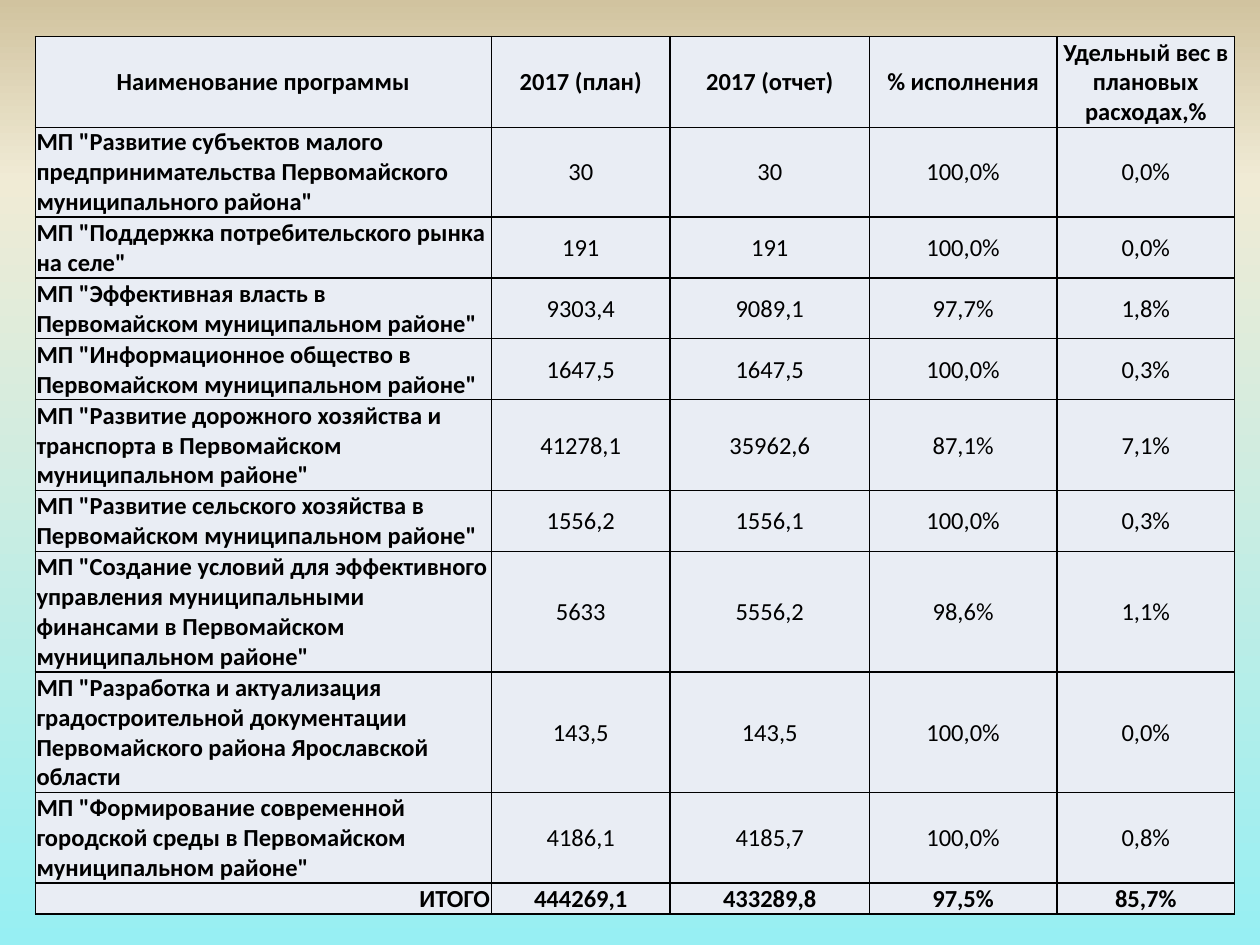
from copy import deepcopy

from pptx import Presentation
from pptx.dml.color import RGBColor
from pptx.enum.text import MSO_ANCHOR, PP_ALIGN
from pptx.oxml import parse_xml
from pptx.oxml.ns import nsdecls, qn
from pptx.util import Inches, Pt

LEFT, CENTER, RIGHT = PP_ALIGN.LEFT, PP_ALIGN.CENTER, PP_ALIGN.RIGHT
MIDDLE, BOTTOM = MSO_ANCHOR.MIDDLE, MSO_ANCHOR.BOTTOM

BLACK = RGBColor(0x00, 0x00, 0x00)
CELL_FILL = RGBColor(0xE9, 0xED, 0xF4)
BACKGROUND_STOPS = [
    (0, RGBColor(0x97, 0xEF, 0xF3)),
    (0.81, RGBColor(0xF0, 0xEB, 0xD5)),
    (1, RGBColor(0xD1, 0xC3, 0x9F)),
]

FONT = "Calibri"
FONT_SIZE = Pt(14)
TABLE_LEFT, HEADER_TOP = 0.28, 0.29
COLUMN_WIDTHS = [3.62, 1.42, 1.58, 1.49, 1.41]
LINE_HEIGHT = 0.237  # one line of cell text, in inches
HEADER_LINES = 3

HEADER = ["Наименование программы", "2017 (план)", "2017 (отчет)",
          "% исполнения", "Удельный вес в плановых расходах,%"]

# Lines of text in the row, then its five cells
PROGRAMMES = [
    (3, 'МП "Развитие субъектов малого предпринимательства Первомайского муниципального района"',
     "30", "30", "100,0%", "0,0%"),
    (2, 'МП "Поддержка потребительского рынка на селе"',
     "191", "191", "100,0%", "0,0%"),
    (2, 'МП "Эффективная власть в Первомайском муниципальном районе"',
     "9303,4", "9089,1", "97,7%", "1,8%"),
    (2, 'МП "Информационное общество в Первомайском муниципальном районе"',
     "1647,5", "1647,5", "100,0%", "0,3%"),
    (3, 'МП "Развитие дорожного хозяйства и транспорта в Первомайском муниципальном районе"',
     "41278,1", "35962,6", "87,1%", "7,1%"),
    (2, 'МП "Развитие сельского хозяйства в Первомайском муниципальном районе"',
     "1556,2", "1556,1", "100,0%", "0,3%"),
    (4, 'МП "Создание условий для эффективного управления муниципальными финансами '
        'в Первомайском муниципальном районе"',
     "5633", "5556,2", "98,6%", "1,1%"),
    (4, 'МП "Разработка и актуализация градостроительной документации '
        'Первомайского района Ярославской области',
     "143,5", "143,5", "100,0%", "0,0%"),
    (3, 'МП "Формирование современной городской среды в Первомайском муниципальном районе"',
     "4186,1", "4185,7", "100,0%", "0,8%"),
]
TOTAL = ["ИТОГО", "444269,1", "433289,8", "97,5%", "85,7%"]


def paint_background(slide):
    """Three-colour gradient running from the bottom edge to the top."""
    fill = slide.background.fill
    fill.gradient()
    fill.gradient_angle = 90
    stop_list = slide.element.find(".//" + qn("a:gsLst"))
    stop_list.append(deepcopy(stop_list[-1]))
    for stop, (position, color) in zip(fill.gradient_stops, BACKGROUND_STOPS):
        stop.position = position
        stop.color.rgb = color


def add_borders(cell):
    properties = cell._tc.get_or_add_tcPr()
    for side in ("lnL", "lnR", "lnT", "lnB"):
        properties.append(parse_xml(
            f'<a:{side} {nsdecls("a")} w="{Pt(1)}"><a:solidFill>'
            f'<a:srgbClr val="{BLACK}"/></a:solidFill></a:{side}>'))


def fill_cell(cell, text, bold, alignment, anchor):
    add_borders(cell)
    cell.fill.solid()
    cell.fill.fore_color.rgb = CELL_FILL
    cell.margin_left = cell.margin_right = cell.margin_top = Inches(0.01)
    cell.margin_bottom = 0
    cell.vertical_anchor = anchor
    paragraph = cell.text_frame.paragraphs[0]
    paragraph.alignment = alignment
    run = paragraph.add_run()
    run.text = text
    run.font.name = FONT
    run.font.size = FONT_SIZE
    run.font.bold = bold
    run.font.color.rgb = BLACK


def add_grid(slide, top, line_counts):
    """Empty table whose row heights follow their numbers of text lines."""
    frame = slide.shapes.add_table(
        len(line_counts), len(COLUMN_WIDTHS), Inches(TABLE_LEFT), Inches(top),
        Inches(sum(COLUMN_WIDTHS)), Inches(sum(line_counts) * LINE_HEIGHT))
    table = frame.table
    table.first_row = table.horz_banding = False
    for column, width in zip(table.columns, COLUMN_WIDTHS):
        column.width = Inches(width)
    for row, lines in zip(table.rows, line_counts):
        row.height = Inches(lines * LINE_HEIGHT)
    return table


def add_programme_table(slide, top):
    table = add_grid(slide, top, [lines for lines, *_ in PROGRAMMES] + [1])
    rows = [texts for _, *texts in PROGRAMMES] + [TOTAL]
    for row_index, texts in enumerate(rows):
        is_total = texts is TOTAL
        for column_index, text in enumerate(texts):
            cell = table.cell(row_index, column_index)
            if column_index == 0:
                fill_cell(cell, text, True, RIGHT if is_total else LEFT, BOTTOM)
            else:
                fill_cell(cell, text, is_total, CENTER, MIDDLE)


def add_header_table(slide, top):
    table = add_grid(slide, top, [HEADER_LINES])
    for column_index, text in enumerate(HEADER):
        anchor = BOTTOM if text is HEADER[-1] else MIDDLE
        fill_cell(table.cell(0, column_index), text, True, CENTER, anchor)


def main():
    presentation = Presentation()
    presentation.slide_width = Inches(10)
    presentation.slide_height = Inches(7.5)
    blank_layout = presentation.slide_layouts[6]
    slide = presentation.slides.add_slide(blank_layout)

    paint_background(slide)
    # The body starts where the header ends
    add_programme_table(slide, HEADER_TOP + HEADER_LINES * LINE_HEIGHT)
    add_header_table(slide, HEADER_TOP)
    presentation.save("out.pptx")


if __name__ == "__main__":
    main()
